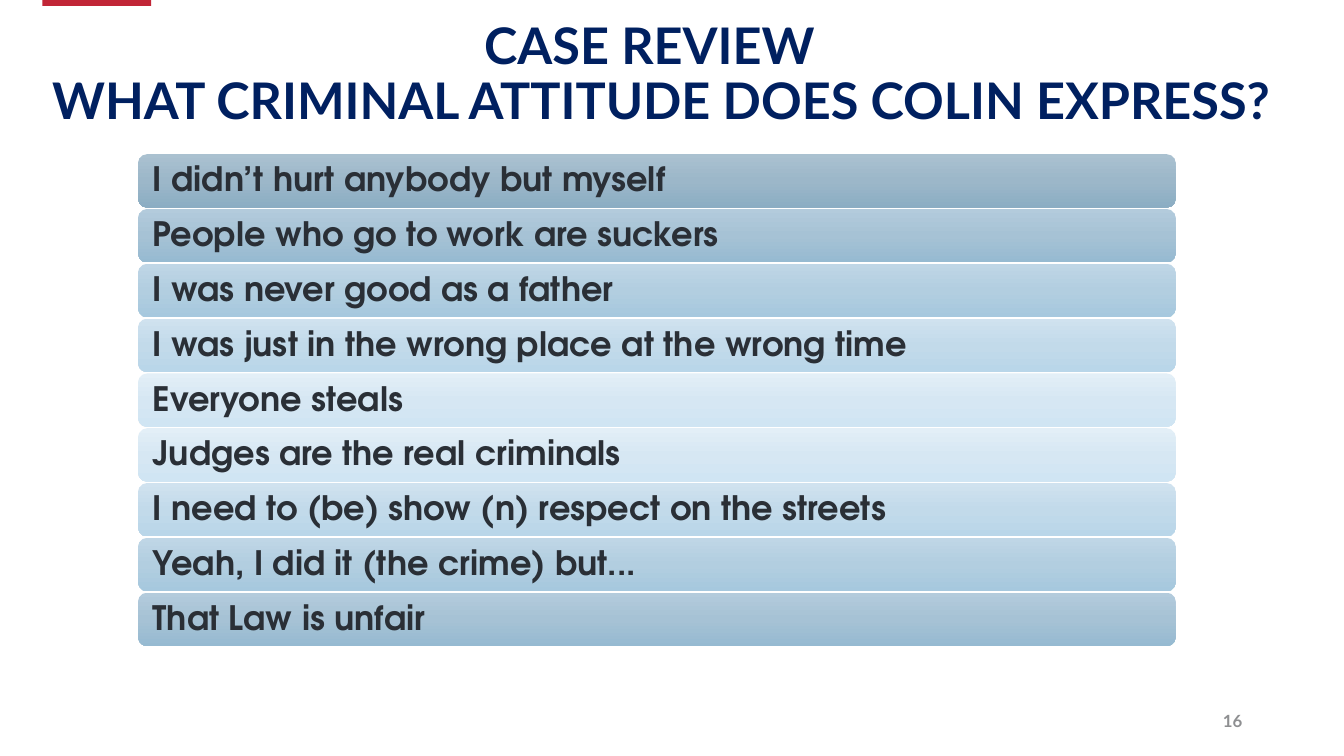
from copy import deepcopy

from pptx import Presentation
from pptx.dml.color import RGBColor
from pptx.enum.shapes import MSO_SHAPE
from pptx.enum.text import MSO_ANCHOR, MSO_AUTO_SIZE, PP_ALIGN
from pptx.util import Inches, Pt

RECTANGLE = MSO_SHAPE.RECTANGLE
ROUNDED = MSO_SHAPE.ROUNDED_RECTANGLE
MIDDLE = MSO_ANCHOR.MIDDLE
NO_FIT = MSO_AUTO_SIZE.NONE
LEFT, CENTER, RIGHT = PP_ALIGN.LEFT, PP_ALIGN.CENTER, PP_ALIGN.RIGHT
TITLE_ONLY = 5

TITLE_FONT = {"name": "Lato", "size": Pt(36), "bold": True}
NUMBER_FONT = {"name": "Lato", "size": Pt(12), "bold": True}
BAR_FONT = {"name": "TeX Gyre Adventor", "size": Pt(24), "bold": True}

# Gradients from the darkest bar to the lightest, top to bottom colour
SHADES = [
    ("AAC1D0", "9CB7C9", "8BADC3"),
    ("B3CBDC", "A6C2D5", "96BAD1"),
    ("BFD6E6", "B2CEE0", "A6C8DE"),
    ("D0E2EF", "C2DAEA", "B9D6E9"),
    ("E3EFF7", "D6E7F3", "D0E5F3"),
]
BAR_SHADES = SHADES + SHADES[:0:-1]

STATEMENTS = [
    "I didn’t hurt anybody but myself",
    "People who go to work are suckers",
    "I was never good as a father",
    "I was just in the wrong place at the wrong time",
    "Everyone steals",
    "Judges are the real criminals",
    "I need to (be) show (n) respect on the streets",
    "Yeah, I did it (the crime) but...",
    "That Law is unfair",
]
BAR_TOP, BAR_PITCH = 1.53, 4.35 / 8


def color(hex_value):
    return RGBColor.from_string(hex_value)


def write_text(shape, text, font, hex_value, align, spacing=1.0, inset=0.1):
    frame = shape.text_frame
    frame.text = text
    settings = {
        "word_wrap": True,
        "auto_size": NO_FIT,
        "vertical_anchor": MIDDLE,
        "margin_left": Inches(inset),
        "margin_right": Inches(inset),
    }
    for name, value in settings.items():
        setattr(frame, name, value)
    para = frame.paragraphs[0]
    para.alignment = align
    para.line_spacing = spacing
    for span in para.runs:
        for name, value in font.items():
            setattr(span.font, name, value)
        span.font.color.rgb = color(hex_value)


def add_block(page, preset, left, top, width, height):
    block = page.shapes.add_shape(
        preset, Inches(left), Inches(top), Inches(width), Inches(height))
    block.shadow.inherit = False
    block.line.fill.background()
    return block


def fill_gradient(shape, shades):
    fill = shape.fill
    fill.gradient()
    fill.gradient_angle = 270
    # The default gradient has two stops; add a third
    stop_list = shape.element.spPr.find(".//{*}gsLst")
    stop_list.append(deepcopy(stop_list[-1]))
    for stop, position, shade in zip(fill.gradient_stops, (0, 0.5, 1), shades):
        stop.position = position
        stop.color.rgb = color(shade)


def add_title(page, text):
    title = page.shapes.title
    title.left, title.top = Inches(0), Inches(0.17)
    title.width, title.height = Inches(13), Inches(1.16)
    write_text(title, text, TITLE_FONT, "002060", CENTER, 0.9)


def add_statement(page, top, text, shades):
    bar = add_block(page, ROUNDED, 1.37, top, 10.29, 0.53)
    fill_gradient(bar, shades)
    write_text(bar, text, BAR_FONT, "2A2F36", LEFT, 0.9, 0.12)


def add_page_number(page, number):
    box = page.shapes.add_textbox(
        Inches(9.42), Inches(6.95), Inches(3), Inches(0.4))
    write_text(box, number, NUMBER_FONT, "8E8F91", RIGHT)


def main():
    deck = Presentation()
    deck.slide_width, deck.slide_height = Inches(13.33), Inches(7.5)
    page = deck.slides.add_slide(deck.slide_layouts[TITLE_ONLY])

    # Red tab at the top edge
    tab = add_block(page, RECTANGLE, 0.42, 0, 1.08, 0.06)
    tab.fill.solid()
    tab.fill.fore_color.rgb = color("C12637")

    add_title(page, "CASE REVIEW \v WHAT CRIMINAL ATTITUDE DOES COLIN EXPRESS?")

    # Stack of statements
    for index, (text, shades) in enumerate(zip(STATEMENTS, BAR_SHADES)):
        add_statement(page, BAR_TOP + index * BAR_PITCH, text, shades)

    add_page_number(page, "16")
    deck.save("out.pptx")


if __name__ == "__main__":
    main()
